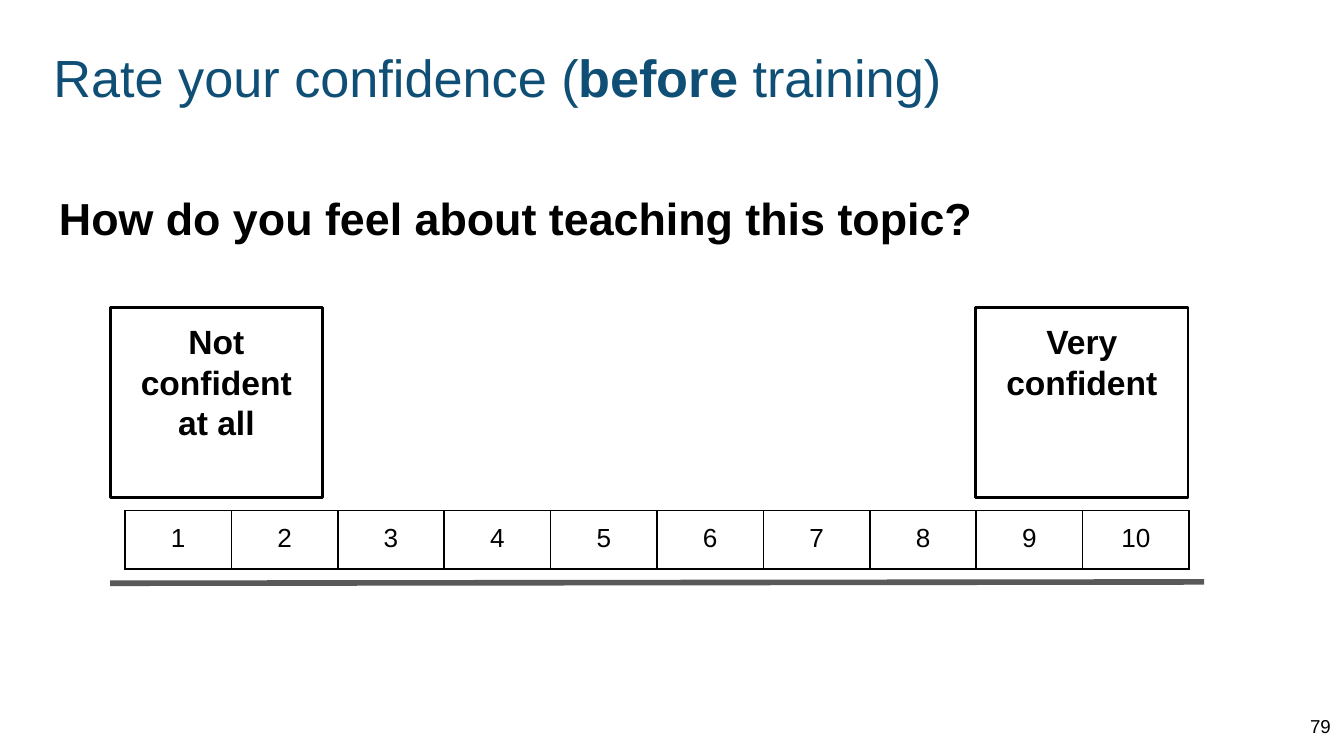
from lxml import etree
from pptx import Presentation
from pptx.dml.color import RGBColor
from pptx.enum.shapes import MSO_CONNECTOR as CONNECTOR, MSO_SHAPE as SHAPE
from pptx.enum.text import MSO_ANCHOR as ANCHOR, PP_ALIGN as ALIGN
from pptx.oxml.ns import qn
from pptx.util import Inches, Pt

# Content: runs are (text, bold)
TITLE = [("Rate your confidence (", False), ("before", True), (" training)", False)]
QUESTION = [("How do you feel about teaching this topic?", True)]
SCALE_ENDS = [("Not confident at all", 0.82), ("Very confident", 7.26)]
RATINGS = range(1, 11)
PAGE_NUMBER = "79"

BLACK, BLUE, GRAY = "000000", "104F75", "595959"
END_TOP, END_WIDTH, END_HEIGHT = 2.29, 1.58, 1.41
SCALE_BOX = (0.93, 3.8, 7.92, 0.42)


def color(value):
    return RGBColor.from_string(value)


def inches(*values):
    return [Inches(value) for value in values]


def write(frame, runs, size, fill=BLACK, align=ALIGN.LEFT):
    paragraph = frame.paragraphs[0]
    paragraph.alignment = align
    for text, bold in runs:
        run = paragraph.add_run()
        run.text = text
        for name, value in {"name": "Arial", "size": Pt(size), "bold": bold}.items():
            setattr(run.font, name, value)
        run.font.color.rgb = color(fill)
    return paragraph


def set_frame(target, anchor=ANCHOR.TOP):
    margins = {f"margin_{side}": Inches(0.1) for side in ("left", "top", "right", "bottom")}
    for name, value in {**margins, "vertical_anchor": anchor}.items():
        setattr(target, name, value)


def add_text(slide, box, runs, size, anchor=ANCHOR.TOP, **style):
    frame = slide.shapes.add_textbox(*inches(*box)).text_frame
    frame.word_wrap = True
    set_frame(frame, anchor)
    return write(frame, runs, size, **style)


def add_borders(cell):
    properties = cell._tc.get_or_add_tcPr()
    for position, side in enumerate(("lnL", "lnR", "lnT", "lnB")):
        line = etree.Element(qn(f"a:{side}"), w=str(Pt(1)))
        fill = etree.SubElement(line, qn("a:solidFill"))
        etree.SubElement(fill, qn("a:srgbClr"), val=BLACK)
        properties.insert(position, line)


# Widescreen 16:9 slide
presentation = Presentation()
presentation.slide_width = Inches(10)
presentation.slide_height = Inches(10) * 9 // 16
slide = presentation.slides.add_slide(presentation.slide_layouts[6])

# Title and question
add_text(slide, (0.3, 0.24, 9.36, 0.63), TITLE, 28, fill=BLUE)
question = add_text(slide, (0.34, 1.26, 9.32, 3.74), QUESTION, 24)
question.line_spacing = 1.15
question.space_after = Pt(16)

# Boxes at both ends of the scale
for label, left in SCALE_ENDS:
    shape = slide.shapes.add_shape(
        SHAPE.RECTANGLE, *inches(left, END_TOP, END_WIDTH, END_HEIGHT))
    shape.shadow.inherit = False
    shape.fill.background()
    shape.line.color.rgb = color(BLACK)
    shape.line.width = Pt(1.5)
    shape.text_frame.word_wrap = True
    set_frame(shape.text_frame)
    write(shape.text_frame, [(label, True)], 18, align=ALIGN.CENTER)

# Rating scale
table = slide.shapes.add_table(1, len(RATINGS), *inches(*SCALE_BOX)).table
table.first_row = table.horz_banding = False
for cell, rating in zip(table.iter_cells(), RATINGS):
    cell.fill.background()
    set_frame(cell)
    write(cell.text_frame, [(str(rating), False)], 14, align=ALIGN.CENTER)
    add_borders(cell)

# Line under the scale
line = slide.shapes.add_connector(CONNECTOR.STRAIGHT, *inches(0.82, 4.34, 8.96, 4.33))
line.line.color.rgb = color(GRAY)
line.line.width = Pt(3)
etree.SubElement(line._element.spPr, qn("a:effectLst"))

# Page number
add_text(slide, (9.4, 5.19, 0.6, 0.43), [(PAGE_NUMBER, False)], 10,
         anchor=ANCHOR.MIDDLE, align=ALIGN.RIGHT)

presentation.save("out.pptx")
